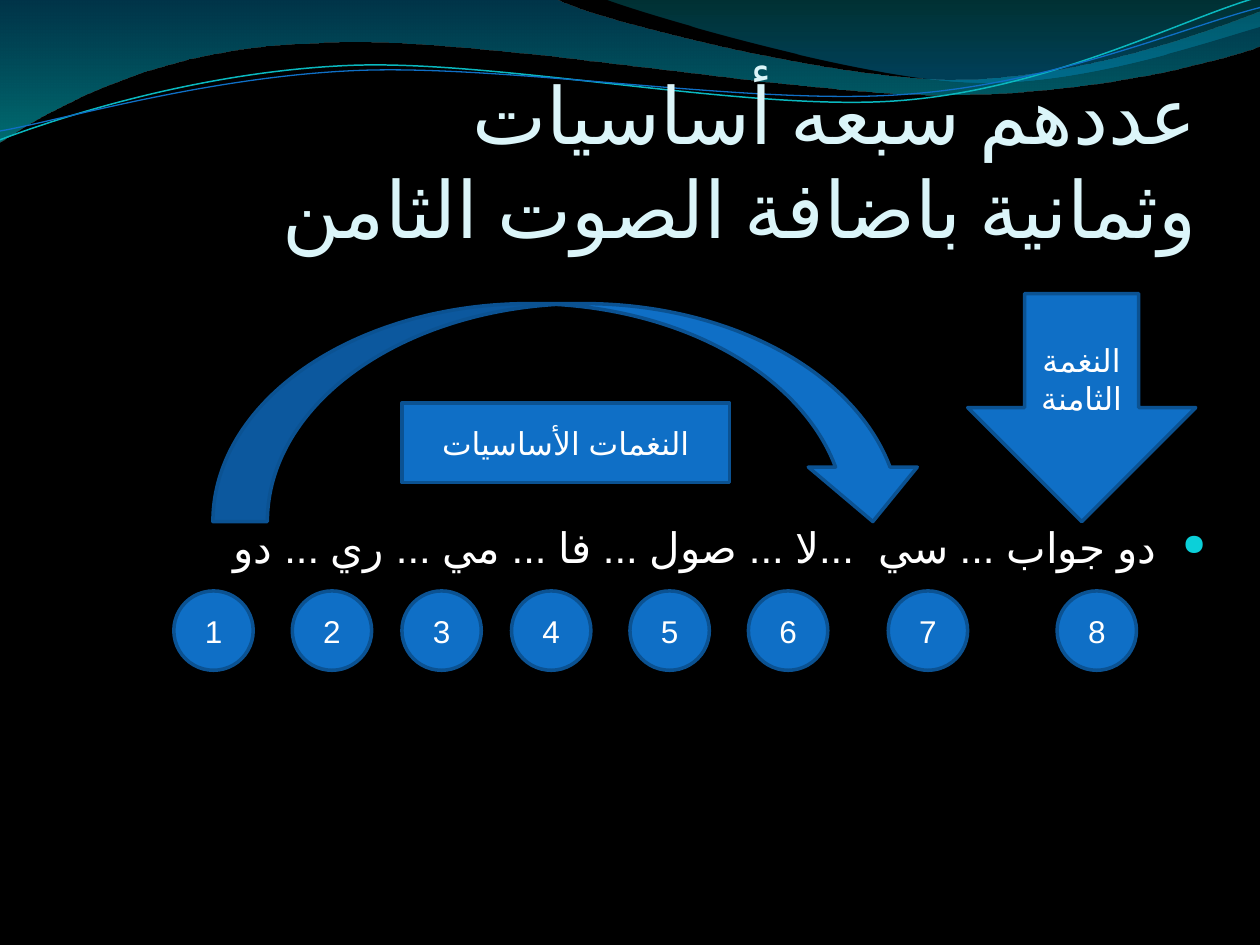
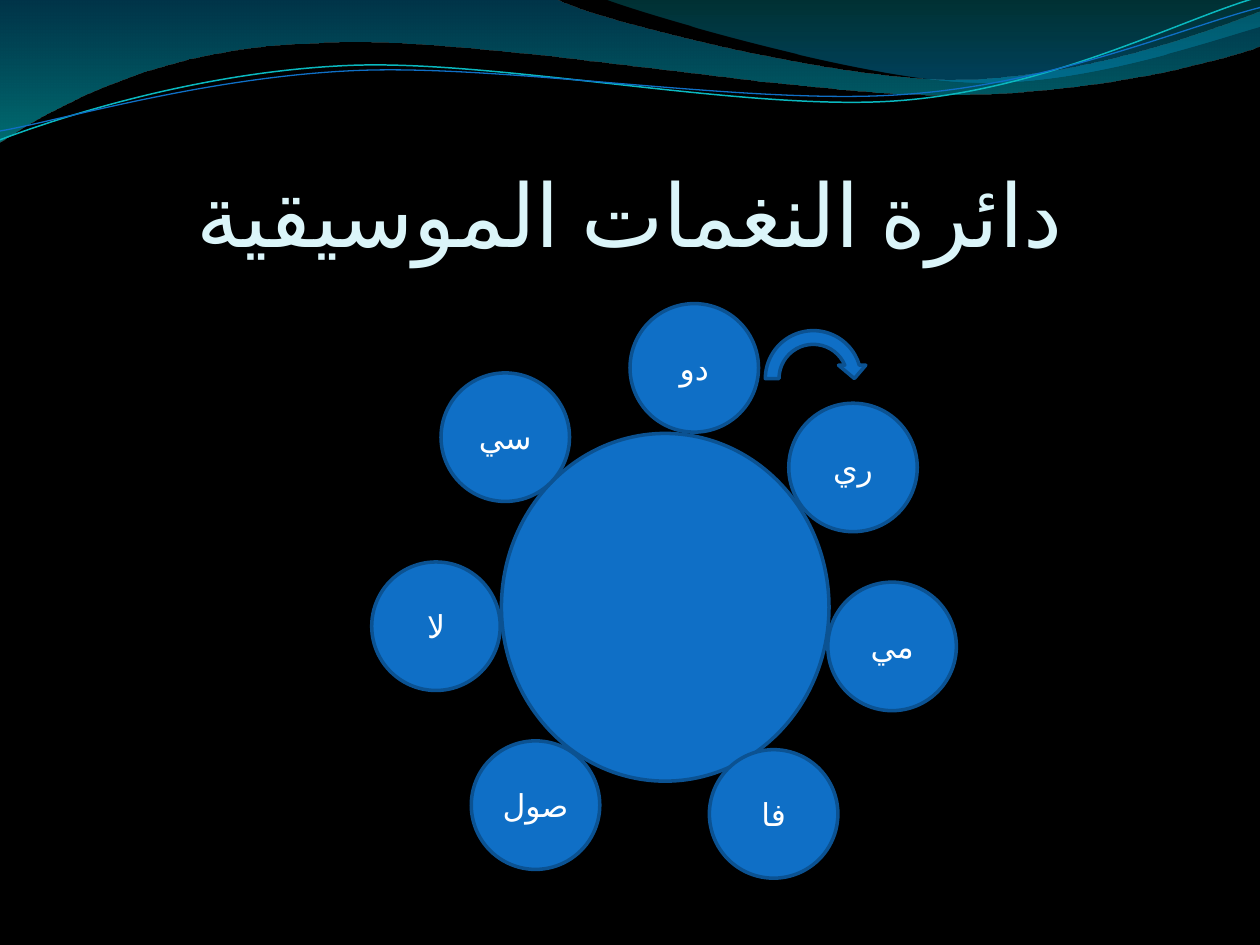
"""Build two slides on the musical notes: the numbered scale and the circle of notes."""
from lxml.etree import SubElement
from pptx import Presentation
from pptx.dml.color import RGBColor
from pptx.enum.shapes import MSO_SHAPE
from pptx.enum.text import MSO_ANCHOR, MSO_AUTO_SIZE, PP_ALIGN
from pptx.oxml.ns import qn
from pptx.util import Inches, Pt

BLACK = RGBColor(0x00, 0x00, 0x00)
WHITE = RGBColor(0xFF, 0xFF, 0xFF)
BLUE = RGBColor(0x0F, 0x6F, 0xC6)
NAVY = RGBColor(0x0B, 0x52, 0x92)
TEAL = RGBColor(0x0A, 0xB8, 0xBF)
CYAN = RGBColor(0x0B, 0xD0, 0xD9)
PALE = RGBColor(0xDB, 0xF5, 0xF9)

WIDTH, HEIGHT = 10, 7.5
LANGUAGE = "ar-SA"

WAVES = [
    dict(start=(0, 0),
         segments=[[(4.4, -0.01)],
                   [(4.76, 0.17), (6.64, 0.63), (7.58, 0.63)],
                   [(8.53, 0.63), (9.58, 0.26), (10, 0.09)],
                   [(10.01, 0.36)],
                   [(9.83, 0.44), (8.7, 0.76), (7.46, 0.75)],
                   [(6.22, 0.75), (3.82, 0.28), (2.57, 0.34)],
                   [(1.29, 0.36), (0.46, 0.83), (-0.01, 1.13)]],
         stops=[(0, RGBColor(0x00, 0x74, 0xA1), 45), (1, RGBColor(0x00, 0xC6, 0xCF), 55)]),
    dict(start=(4.79, -0.01),
         segments=[[(5.09, 0.11), (6.82, 0.62), (7.69, 0.65)],
                   [(8.56, 0.69), (9.61, 0.32), (10, 0.21)],
                   [(10, 0)]],
         stops=[(0, RGBColor(0x00, 0xA1, 0xA9), 30), (0.8, RGBColor(0x00, 0x8B, 0xBF), 45)]),
    dict(start=(0, 1.11),
         segments=[[(0.48, 0.93), (1.58, 0.57), (2.77, 0.52)],
                   [(3.95, 0.47), (5.93, 0.89), (7.13, 0.8)],
                   [(8.33, 0.71), (9.38, 0.15), (9.98, -0.02)]],
         line=(TEAL, 0.85)),
    dict(start=(0, 1.04),
         segments=[[(0.47, 0.96), (1.64, 0.61), (2.83, 0.56)],
                   [(4.03, 0.51), (5.97, 0.84), (7.17, 0.75)],
                   [(8.36, 0.67), (9.41, 0.21), (10, 0.06)]],
         line=(BLUE, 0.75)),
]

SCALE_TITLE = "عددهم سبعه أساسيات \vوثمانية باضافة الصوت الثامن"
SCALE_LINE = " دو جواب ... سي ... لا ... صول ... فا ... مي ... ري ... دو"
SCALE_SHAPES = [
    (MSO_SHAPE.CURVED_DOWN_ARROW, (1.69, 2.41, 5.67, 1.73), []),
    (MSO_SHAPE.RECTANGLE, (3.19, 3.2, 2.6, 0.63), ["النغمات الأساسيات"]),
    (MSO_SHAPE.DOWN_ARROW, (7.68, 2.33, 1.81, 1.81), ["النغمة", "الثامنة"]),
]
NUMBER_LEFTS = [1.38, 2.32, 3.19, 4.06, 5, 5.94, 7.05, 8.39]
NUMBER_TOP, NUMBER_SIZE = 4.69, 0.63

CIRCLE_TITLE = "دائرة النغمات الموسيقية"
CIRCLE_SHAPES = [
    (MSO_SHAPE.OVAL, (3.98, 3.44, 2.6, 2.76), []),
    (MSO_SHAPE.CIRCULAR_ARROW, (6.02, 2.57, 0.87, 0.87), []),
]
NOTES = [("دو", 5, 2.41), ("ري", 6.26, 3.2), ("مي", 6.57, 4.62), ("فا", 5.63, 5.95),
         ("صول", 3.74, 5.88), ("لا", 2.95, 4.46), ("سي", 3.5, 2.96)]
NOTE_SIZE = 1.02


def set_attrs(obj, values):
    for name, value in values.items():
        setattr(obj, name, value)


def write(tf, lines, size, color, align, font="Arial"):
    for i, line in enumerate(lines):
        p = tf.paragraphs[0] if i == 0 else tf.add_paragraph()
        p.text = line
        p.alignment = align
        p._p.get_or_add_pPr().set("rtl", "1")
        for r in p.runs:
            set_attrs(r.font, dict(name=font, size=Pt(size), bold=False))
            r.font.color.rgb = color
            rPr = r._r.get_or_add_rPr()
            rPr.set("lang", LANGUAGE)
            SubElement(rPr, qn("a:cs"), typeface=font)


def add_note_shape(s, kind, box, lines):
    sp = s.shapes.add_shape(kind, *map(Inches, box))
    sp.shadow.inherit = False
    sp.fill.solid()
    sp.fill.fore_color.rgb = BLUE
    sp.line.color.rgb = NAVY
    sp.line.width = Pt(2)
    sp.text_frame.vertical_anchor = MSO_ANCHOR.MIDDLE
    write(sp.text_frame, lines, 18, WHITE, PP_ALIGN.CENTER)


def curve_segments(sp, segments):
    edges = iter(list(sp._element.iter(qn("a:lnTo"))))
    for segment in segments:
        first, *rest = [next(edges) for _ in segment]
        if rest:
            first.tag = qn("a:cubicBezTo")
            for edge in rest:
                first.append(edge[0])
                edge.getparent().remove(edge)


def add_wave(s, wave):
    points = [wave["start"]] + [point for segment in wave["segments"] for point in segment]
    points = [(Inches(x), Inches(y)) for x, y in points]
    builder = s.shapes.build_freeform(*points[0])
    builder.add_line_segments(points[1:], close="stops" in wave)
    sp = builder.convert_to_shape()
    curve_segments(sp, wave["segments"])
    sp.shadow.inherit = False
    if "stops" in wave:
        sp.line.fill.background()
        sp.fill.gradient()
        sp.fill.gradient_angle = 270
        for stop, (position, color, _) in zip(sp.fill.gradient_stops, wave["stops"]):
            stop.position = position
            stop.color.rgb = color
        for clr, (_, _, alpha) in zip(sp._element.spPr.iter(qn("a:srgbClr")), wave["stops"]):
            SubElement(clr, qn("a:alpha"), val=str(alpha * 1000))
    else:
        color, width = wave["line"]
        sp.fill.background()
        sp.line.color.rgb = color
        sp.line.width = Pt(width)
    return sp


def decorate_master(prs, s):
    master = prs.slide_master
    master.background.fill.solid()
    master.background.fill.fore_color.rgb = BLACK
    for i, wave in enumerate(WAVES):
        el = add_wave(s, wave)._element
        el.nvSpPr.cNvPr.set("id", str(100 + i))
        master.shapes._spTree.insert(2 + i, el)


def add_title_slide(prs, title, height, size, align):
    s = prs.slides.add_slide(prs.slide_layouts[5])
    sp = s.shapes.title
    set_attrs(sp, dict(left=Inches(0.5), top=Inches(0.77), width=Inches(9), height=Inches(height)))
    set_attrs(sp.text_frame, dict(vertical_anchor=MSO_ANCHOR.BOTTOM, auto_size=MSO_AUTO_SIZE.NONE,
                                  word_wrap=True, margin_left=0, margin_right=0,
                                  margin_top=Inches(0.05), margin_bottom=0))
    write(sp.text_frame, [title], size, PALE, align, "Karla")
    return s


def add_scale_line(s):
    tf = s.shapes.add_textbox(*map(Inches, (0.67, 3.04, 9, 4.4))).text_frame
    set_attrs(tf, dict(word_wrap=True, margin_top=Inches(1.1)))
    write(tf, [SCALE_LINE], 24, WHITE, PP_ALIGN.RIGHT)
    pPr = tf.paragraphs[0]._p.get_or_add_pPr()
    pPr.set("marL", str(Inches(0.3)))
    pPr.set("indent", str(Inches(-0.3)))
    SubElement(SubElement(pPr, qn("a:buClr")), qn("a:srgbClr"), val=str(CYAN))
    SubElement(pPr, qn("a:buSzPct"), val="71000")
    SubElement(pPr, qn("a:buChar"), char="●")


def main():
    prs = Presentation()
    set_attrs(prs, dict(slide_width=Inches(WIDTH), slide_height=Inches(HEIGHT)))

    s = add_title_slide(prs, SCALE_TITLE, 1.25, 45, PP_ALIGN.RIGHT)
    decorate_master(prs, s)
    add_scale_line(s)
    for shape in SCALE_SHAPES:
        add_note_shape(s, *shape)
    for number, left in enumerate(NUMBER_LEFTS, 1):
        add_note_shape(s, MSO_SHAPE.OVAL, (left, NUMBER_TOP, NUMBER_SIZE, NUMBER_SIZE), [str(number)])

    s = add_title_slide(prs, CIRCLE_TITLE, 1.33, 50, PP_ALIGN.CENTER)
    for shape in CIRCLE_SHAPES:
        add_note_shape(s, *shape)
    for note, left, top in NOTES:
        add_note_shape(s, MSO_SHAPE.OVAL, (left, top, NOTE_SIZE, NOTE_SIZE), [note])

    prs.save("out.pptx")


if __name__ == "__main__":
    main()
